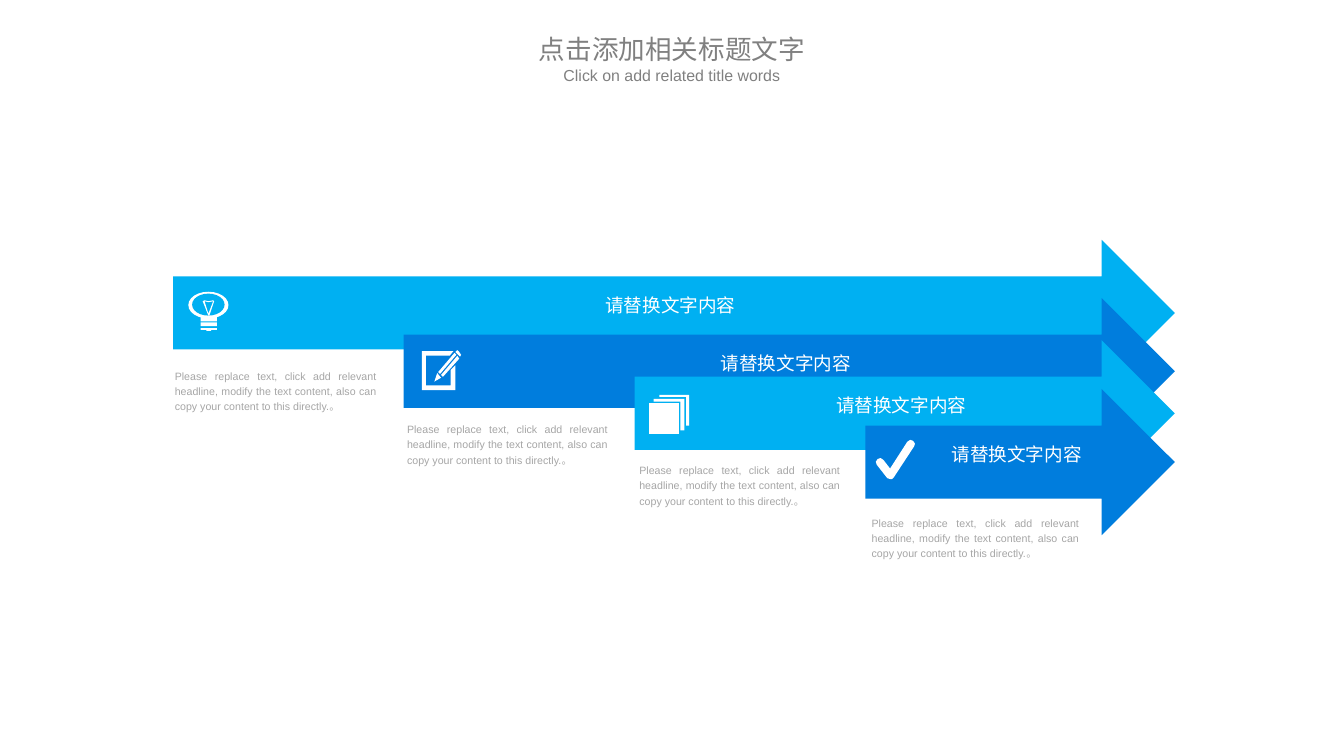
import pptx
import pptx.dml.color
import pptx.enum.shapes
import pptx.enum.text
import pptx.oxml
import pptx.oxml.ns
import pptx.util

SHAPE = pptx.enum.shapes.MSO_SHAPE
ANCHOR = pptx.enum.text.MSO_ANCHOR
ALIGN = pptx.enum.text.PP_ALIGN
inches = pptx.util.Inches

WIDTH, HEIGHT = 14.06, 7.91
FIRST_LEFT, COLUMN = 1.81, 2.414
TIP = 12.29
ARROW_HEIGHT = 1.53
BAR_HEIGHT = ARROW_HEIGHT / 2
UNIT = 0.01
SKY, BLUE, WHITE = "00B0F2", "007DDD", "FFFFFF"
CJK = "Noto Sans CJK SC"
LABEL = "请替换文字内容"
CAPTION = ("Please replace text, click add relevant headline, modify the text content, "
           "also can copy your content to this directly.。")

FILAMENT = [
    [(27, 10), (26, 9), (21, 10), (17, 9), (15, 10), (21, 25), (22, 25)],
    [(21, 23), (17, 10), (21, 11), (26, 10)],
]
BULB_BASE = [[(13, 38), (30, 38), (30, 40), (24, 40), (24, 41), (19, 41), (19, 40), (13, 40)]]
NOTEPAD = [
    [[(20, 29), (16, 24), (13, 33)]],
    [[(34, 3), (17, 23), (19, 25), (36, 5)]],
    [[(20, 26), (22, 28), (39, 9), (37, 6)]],
    [[(35, 2), (37, 0), (39, 2), (41, 5), (40, 7)]],
    [[(30, 37), (4, 37), (4, 6), (29, 6), (33, 1), (0, 1), (0, 42), (35, 42), (35, 16), (30, 21)]],
]
PAGES = [
    [[(5, 4), (5, 7), (33, 7), (33, 37), (37, 37), (37, 4)]],
    [[(11, 0), (11, 2), (39, 2), (39, 32), (42, 32), (42, 0)]],
    [[(0, 8), (0, 41), (31, 41), (31, 8)]],
]
CHECK = [[(15, 41), (12, 40), (1, 26), (0, 23), (2, 20), (5, 19), (8, 21), (15, 30), (33, 2),
          (36, 0), (39, 1), (41, 4), (40, 7), (19, 39), (17, 41)]]


def colour(value):
    """Turn a hex string into a colour."""
    return pptx.dml.color.RGBColor.from_string(value)


def write(shape, text, size, value, font="Arial", align=ALIGN.CENTER, spacing=1.0,
          anchor=ANCHOR.TOP, insets=(0.1, 0.05, 0.1, 0.05)):
    """Put one formatted paragraph into a shape."""
    frame = shape.text_frame
    frame.text = text
    frame.word_wrap = True
    frame.auto_size = pptx.enum.text.MSO_AUTO_SIZE.NONE
    frame.vertical_anchor = anchor
    (frame.margin_left, frame.margin_top,
     frame.margin_right, frame.margin_bottom) = map(inches, insets)
    para = frame.paragraphs[0]
    para.alignment = align
    para.line_spacing = spacing
    para.space_before = pptx.util.Pt(0)
    span = para.runs[0]
    span.font.size = pptx.util.Pt(size)
    span.font.name = font
    span.font.color.rgb = colour(value)
    east_asian = pptx.oxml.parse_xml(
        f'<a:ea {pptx.oxml.ns.nsdecls("a")} typeface="{CJK}"/>')
    span.font._element.find(pptx.oxml.ns.qn("a:latin")).addnext(east_asian)


def paint(shape, value):
    """Give a shape a flat fill without line or shadow."""
    shape.fill.solid()
    shape.fill.fore_color.rgb = colour(value)
    shape.line.fill.background()
    shape.shadow.inherit = False
    return shape


def add_heading(placeholder, top, width, text, size, font):
    """Centre a placeholder on the slide and fill it."""
    placeholder.left, placeholder.top = inches((WIDTH - width) / 2), inches(top)
    placeholder.width, placeholder.height = inches(width), inches(0.41)
    write(placeholder, text, size, "808080", font)


def add_preset(shapes, kind, left, top, width, height, value):
    """Add a painted preset shape."""
    return paint(shapes.add_shape(kind, *map(inches, (left, top, width, height))), value)


def add_outline(shapes, contours, left, top):
    """Add a white outline whose points are counted in units from a corner."""
    builder = shapes.build_freeform(*contours[0][0], scale=inches(UNIT))
    builder.add_line_segments(contours[0][1:])
    for contour in contours[1:]:
        builder.move_to(*contour[0])
        builder.add_line_segments(contour[1:])
    paint(builder.convert_to_shape(inches(left), inches(top)), WHITE)


def add_bulb(shapes, left, top):
    """Draw the light bulb."""
    for kind, x, y, width, height, value in (
            (SHAPE.RECTANGLE, 13, 25, 17, 6, WHITE),
            (SHAPE.OVAL, 0, 0, 42, 28, WHITE),
            (SHAPE.OVAL, 4, 2, 34, 23, SKY),
            (SHAPE.RECTANGLE, 13, 32, 17, 4, WHITE)):
        add_preset(shapes, kind, left + x * UNIT, top + y * UNIT,
                   width * UNIT, height * UNIT, value)
    add_outline(shapes, BULB_BASE, left, top)
    add_outline(shapes, FILAMENT, left, top)


def add_notepad(shapes, left, top):
    """Draw the notepad with its pencil."""
    for part in NOTEPAD:
        add_outline(shapes, part, left, top)


def add_pages(shapes, left, top):
    """Draw the stack of pages."""
    for part in PAGES:
        add_outline(shapes, part, left, top)


def add_check(shapes, left, top):
    """Draw the check mark."""
    add_outline(shapes, CHECK, left, top)


def add_arrow(page, left, top, value):
    """Add a labelled arrow that ends at the common tip."""
    arrow = add_preset(page.shapes, SHAPE.RIGHT_ARROW, left, top, TIP - left, ARROW_HEIGHT, value)
    write(arrow, LABEL, 14, WHITE, spacing=1.2, anchor=ANCHOR.MIDDLE,
          insets=(0.41, 0.05, 0.1, 0.26))


def add_caption(page, left, top, width):
    """Add a justified caption."""
    box = page.shapes.add_textbox(*map(inches, (left, top, width, 0.58)))
    write(box, CAPTION, 8, "A6A6A6", align=ALIGN.JUSTIFY, spacing=1.2)


def main():
    """Build the slide."""
    deck = pptx.Presentation()
    deck.slide_width, deck.slide_height = inches(WIDTH), inches(HEIGHT)
    page = deck.slides.add_slide(deck.slide_layouts[0])
    add_heading(page.shapes.title, 0.29, 3.35, "点击添加相关标题文字", 20, CJK)
    add_heading(page.placeholders[1], 0.64, 2.54, "Click on add related title words", 12, "Arial")

    steps = (
        (2.51, SKY, add_bulb, 0.16, 0.16, 3.79, 2.31),
        (3.12, BLUE, add_notepad, 0.19, 0.16, 4.35, 2.3),
        (3.56, SKY, add_pages, 0.15, 0.19, 4.78, 2.3),
        (4.07, BLUE, add_check, 0.11, 0.15, 5.33, 2.37),
    )
    for index, (top, value, draw_icon, icon_x, icon_y, caption_top, caption_width) in enumerate(steps):
        left = FIRST_LEFT + index * COLUMN
        add_arrow(page, left, top, value)
        bar_top = top + (ARROW_HEIGHT - BAR_HEIGHT) / 2
        draw_icon(page.shapes.add_group_shape().shapes, left + icon_x, bar_top + icon_y)
        add_caption(page, 1.73 + index * 2.43, caption_top, caption_width)
    deck.save("out.pptx")


if __name__ == "__main__":
    main()
